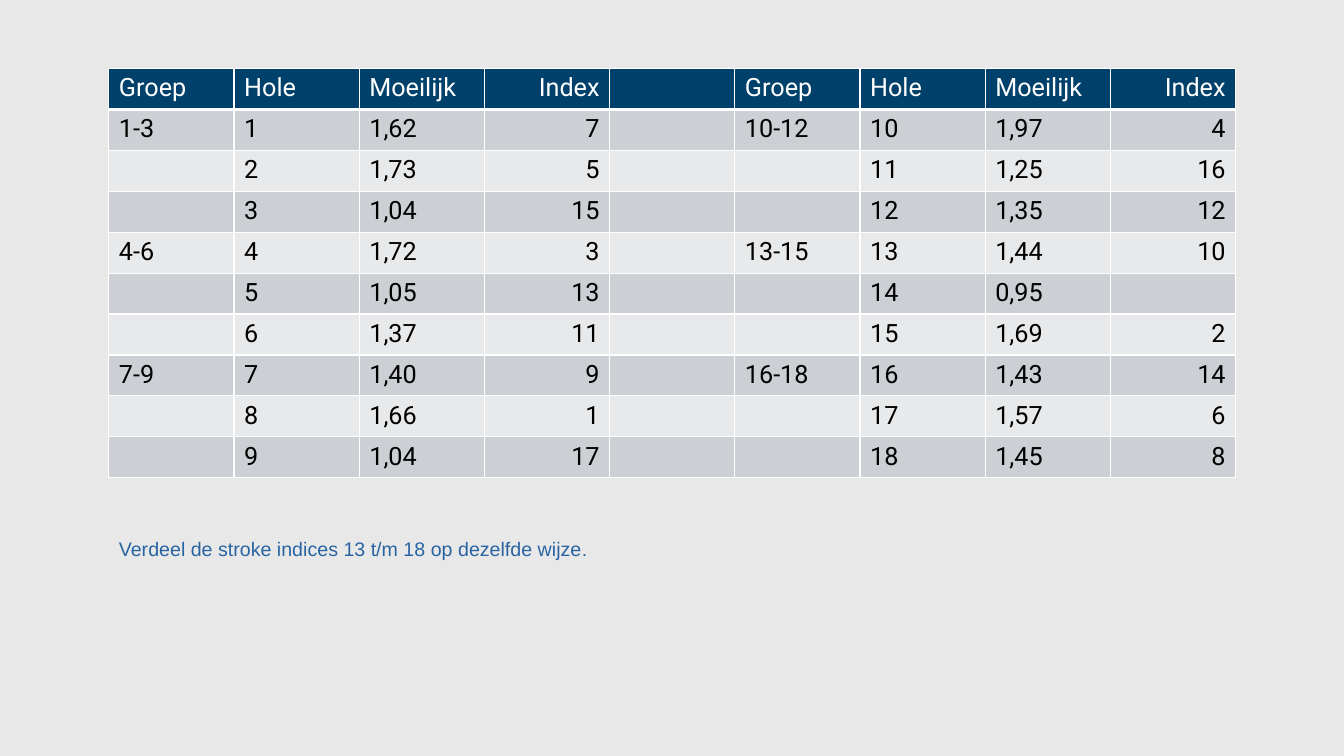
import pptx
import pptx.dml.color
import pptx.enum.text
import pptx.oxml
import pptx.oxml.ns
import pptx.util
from pptx.util import Inches

HEADINGS = ["Groep", "Hole", "Moeilijk", "Index"]
FRONT_NINE = [("1,62", "7"), ("1,73", "5"), ("1,04", "15"),
              ("1,72", "3"), ("1,05", "13"), ("1,37", "11"),
              ("1,40", "9"), ("1,66", "1"), ("1,04", "17")]
BACK_NINE = [("1,97", "4"), ("1,25", "16"), ("1,35", "12"),
             ("1,44", "10"), ("0,95", ""), ("1,69", "2"),
             ("1,43", "14"), ("1,57", "6"), ("1,45", "8")]


def color(value):
    return pptx.dml.color.RGBColor.from_string(value)


def hole_rows(first_hole, scores):
    rows = []
    for offset, (difficulty, index) in enumerate(scores):
        hole = first_hole + offset
        group = f"{hole}-{hole + 2}" if offset % 3 == 0 else ""
        rows.append([group, str(hole), difficulty, index])
    return rows


class SlideBuilder:
    table_font = "Roboto"
    note_font = "Arial"
    header_fill = "00416B"
    band_fills = ["E7E9EB", "CCCFD4"]
    border_color = "FFFFFF"
    note_color = "2964A2"

    def __init__(self, presentation, background):
        self.slide = presentation.slides.add_slide(presentation.slide_layouts[6])
        fill = self.slide.background.fill
        fill.solid()
        fill.fore_color.rgb = color(background)

    def style_paragraph(self, paragraph, size, name, text_color):
        paragraph.font.size = pptx.util.Pt(size)
        paragraph.font.name = name
        paragraph.font.color.rgb = color(text_color)

    def border(self, cell, widths):
        properties = cell._tc.get_or_add_tcPr()
        for side, width in zip("LRTB", widths):
            properties.append(pptx.oxml.parse_xml(
                f'<a:ln{side} {pptx.oxml.ns.nsdecls("a")} w="{pptx.util.Pt(width)}">'
                f'<a:solidFill><a:srgbClr val="{self.border_color}"/></a:solidFill>'
                f'</a:ln{side}>'))

    def table(self, rows, left, top, column_width, row_height, right_aligned):
        columns = len(rows[0])
        table = self.slide.shapes.add_table(
            len(rows), columns, Inches(left), Inches(top),
            Inches(column_width * columns), Inches(row_height * len(rows))).table
        table.first_row = False
        table.horz_banding = False
        for column in table.columns:
            column.width = Inches(column_width)
        for row_number, row in enumerate(rows):
            table.rows[row_number].height = Inches(row_height)
            is_header = row_number == 0
            fill = self.header_fill if is_header else self.band_fills[row_number % 2]
            text_color = "FFFFFF" if is_header else "000000"
            widths = (1, 1, 3 if row_number == 1 else 1, 3 if is_header else 1)
            for column_number, text in enumerate(row):
                cell = table.cell(row_number, column_number)
                self.border(cell, widths)
                cell.fill.solid()
                cell.fill.fore_color.rgb = color(fill)
                cell.text = text
                paragraph = cell.text_frame.paragraphs[0]
                self.style_paragraph(paragraph, 18, self.table_font, text_color)
                if column_number in right_aligned:
                    paragraph.alignment = pptx.enum.text.PP_ALIGN.RIGHT

    def note(self, parts, left, top, width, height):
        frame = self.slide.shapes.add_textbox(
            Inches(left), Inches(top), Inches(width), Inches(height)).text_frame
        frame.word_wrap = True
        frame.auto_size = pptx.enum.text.MSO_AUTO_SIZE.SHAPE_TO_FIT_TEXT
        paragraph = frame.paragraphs[0]
        self.style_paragraph(paragraph, 14, self.note_font, self.note_color)
        for text, font_name in parts:
            run = paragraph.add_run()
            run.text = text
            run.font.name = font_name


def main():
    presentation = pptx.Presentation()
    presentation.slide_width = Inches(13.33)
    presentation.slide_height = Inches(7.5)
    builder = SlideBuilder(presentation, "E8E8E8")
    front = [HEADINGS] + hole_rows(1, FRONT_NINE)
    back = [HEADINGS] + hole_rows(10, BACK_NINE)
    rows = [left + [""] + right for left, right in zip(front, back)]
    builder.table(rows, 1.08, 0.68, 1.242, 0.406, right_aligned=(3, 8))
    builder.note([("Verdeel de stroke indices 13 t/m 18 op dezelfde wijze", builder.note_font),
                  (".", builder.table_font)], 1.08, 5.28, 11.18, 0.34)
    presentation.save("out.pptx")


if __name__ == "__main__":
    main()
